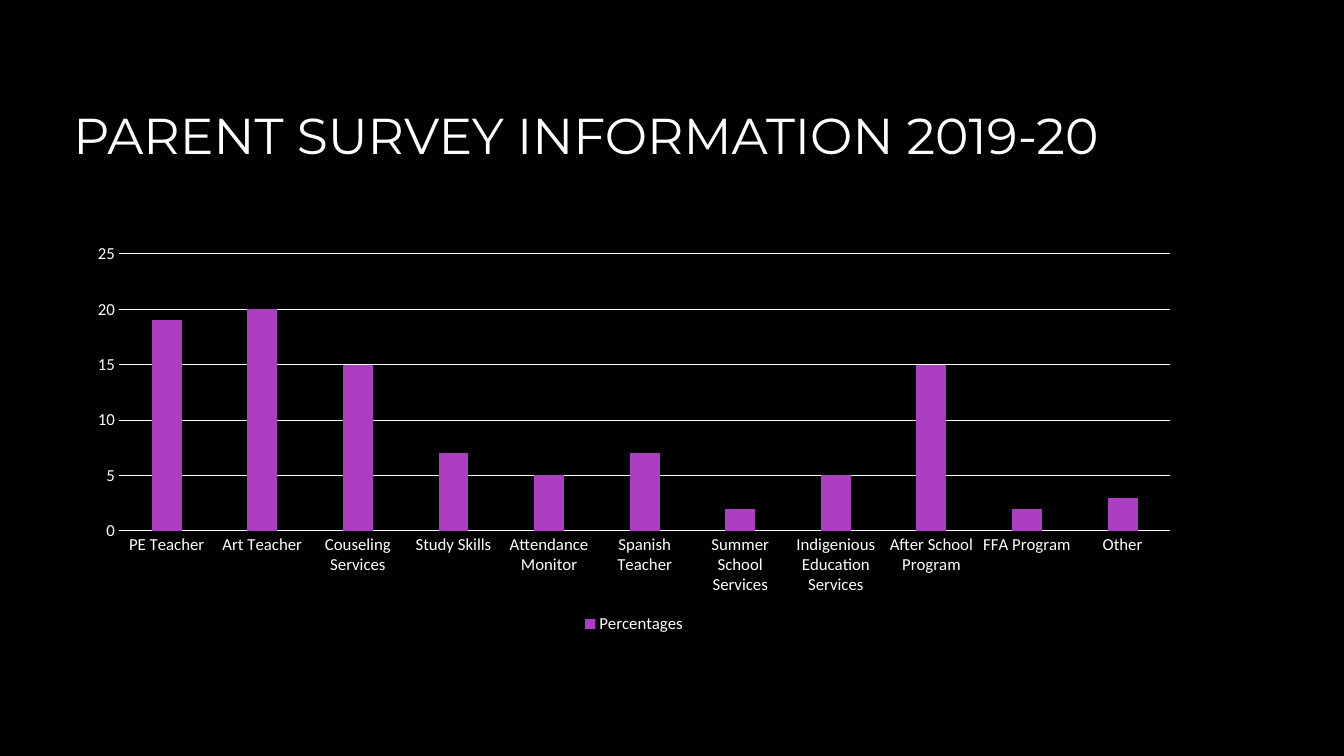
from dataclasses import dataclass

from pptx import Presentation
from pptx.chart import data
from pptx.dml.color import RGBColor
from pptx.enum import chart as charts, text
from pptx.util import Inches, Pt


@dataclass(frozen=True)
class Theme:
    """Colours, fonts and sizes of the slide."""
    background: RGBColor = RGBColor(0x00, 0x00, 0x00)
    ink: RGBColor = RGBColor(0xFF, 0xFF, 0xFF)
    bar: RGBColor = RGBColor(0xAC, 0x3E, 0xC1)
    heading_font: str = "Montserrat"
    body_font: str = "Calibri"
    title_size: int = 36
    label_size: int = 12
    line_width: float = 0.75


THEME = Theme()
SURVEY = {
    "PE Teacher": 19,
    "Art Teacher": 20,
    "Couseling Services": 15,
    "Study Skills": 7,
    "Attendance Monitor": 5,
    "Spanish Teacher": 7,
    "Summer School Services": 2,
    "Indigenious Education Services": 5,
    "After School Program": 15,
    "FFA Program": 2,
    "Other": 3,
}


def set_font(font, name=THEME.body_font, size=THEME.label_size, color=THEME.ink):
    """Apply a typeface, size and colour to a font."""
    font.name, font.size = name, Pt(size)
    font.bold = False
    font.color.rgb = color


def add_text(tf, content, anchor=text.MSO_ANCHOR.MIDDLE, **fmt):
    """Write one formatted paragraph into a text frame."""
    tf.word_wrap = True
    tf.vertical_anchor = anchor
    r = tf.paragraphs[0].add_run()
    r.text = content
    set_font(r.font, **fmt)


def add_title(s, box, content):
    """Place the slide title in its box."""
    sp = s.shapes.add_textbox(*map(Inches, box))
    add_text(sp.text_frame, content, name=THEME.heading_font, size=THEME.title_size)


def set_line(line):
    """Draw a thin chart line in the ink colour."""
    line.color.rgb = THEME.ink
    line.width = Pt(THEME.line_width)


def style_axes(chart):
    """Format the category and value axes with their gridlines."""
    cat, val = chart.category_axis, chart.value_axis
    for axis in (cat, val):
        axis.major_tick_mark = axis.minor_tick_mark = charts.XL_TICK_MARK.NONE
        set_font(axis.tick_labels.font)
    set_line(cat.format.line)
    val.format.line.fill.background()
    val.minimum_scale, val.maximum_scale, val.major_unit = 0, 25, 5
    val.has_major_gridlines = True
    set_line(val.major_gridlines.format.line)


def add_survey_chart(s, box, name, values):
    """Place the survey column chart with its legend in its box."""
    cd = data.CategoryChartData()
    cd.categories = list(values)
    cd.add_series(name, list(values.values()))
    kind = charts.XL_CHART_TYPE.COLUMN_CLUSTERED
    chart = s.shapes.add_chart(kind, *map(Inches, box), cd).chart
    set_font(chart.font)
    chart.has_title = False
    chart.has_legend = True
    chart.legend.position = charts.XL_LEGEND_POSITION.BOTTOM
    chart.legend.include_in_layout = False
    set_font(chart.legend.font)
    plot = chart.plots[0]
    plot.gap_width, plot.overlap = 219, -27
    plot.vary_by_categories = False
    fill = plot.series[0].format.fill
    fill.solid()
    fill.fore_color.rgb = THEME.bar
    style_axes(chart)


def add_survey_slide(prs):
    """Build the survey slide."""
    s = prs.slides.add_slide(prs.slide_layouts[6])
    s.background.fill.solid()
    s.background.fill.fore_color.rgb = THEME.background
    add_title(s, (0.63, 0.54, 11.59, 1.59), "PARENT SURVEY INFORMATION 2019-20")
    add_survey_chart(s, (0.75, 2.34, 11.08, 3.99), "Percentages", SURVEY)


def main():
    """Create and save the presentation."""
    prs = Presentation()
    prs.slide_width, prs.slide_height = Inches(13.33), Inches(7.5)
    add_survey_slide(prs)
    prs.save("out.pptx")


if __name__ == "__main__":
    main()
